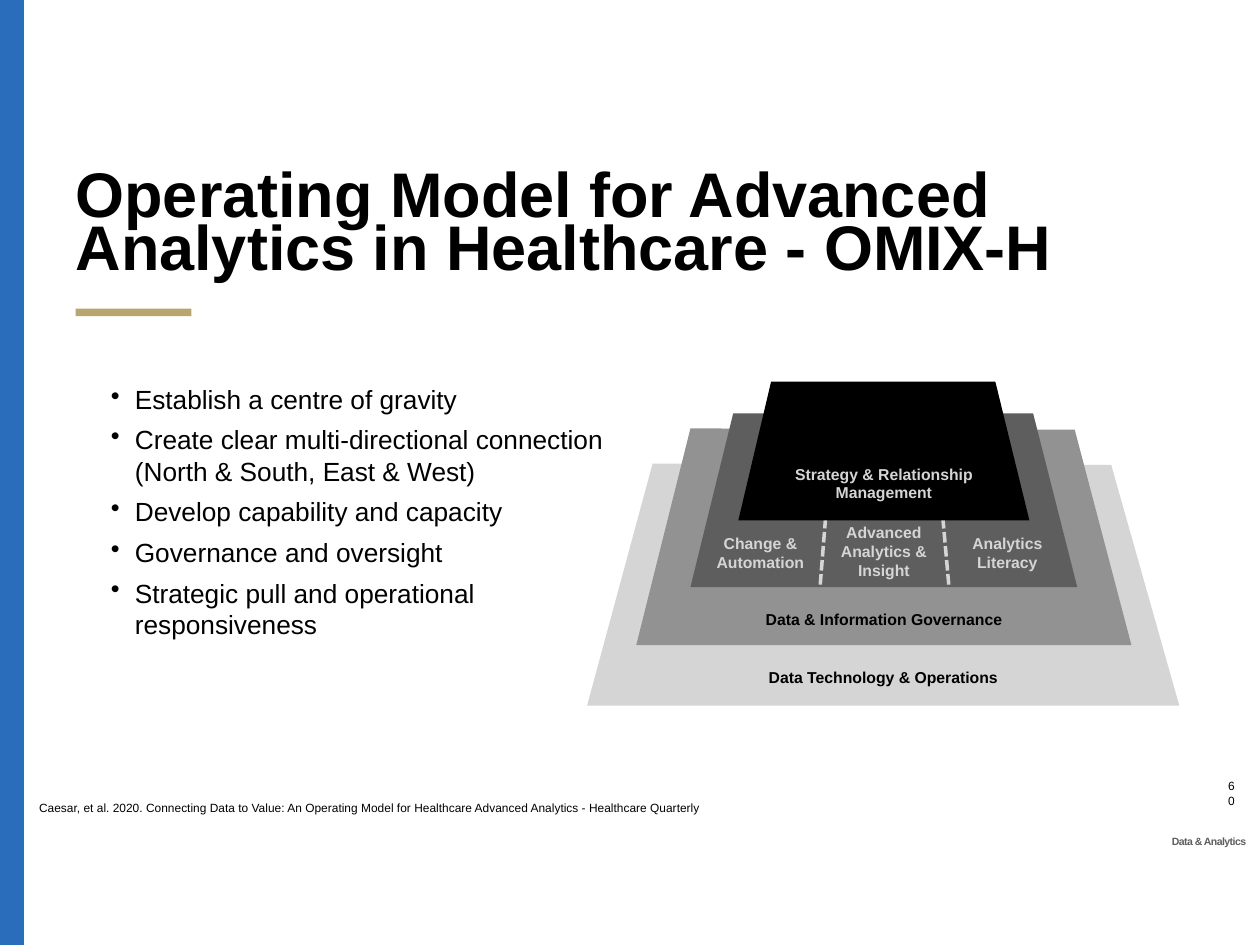
from dataclasses import dataclass

from lxml import etree
from pptx import Presentation
from pptx.dml.color import RGBColor
from pptx.enum.dml import MSO_LINE
from pptx.enum.shapes import MSO_CONNECTOR, MSO_SHAPE
from pptx.enum.text import MSO_ANCHOR, MSO_AUTO_SIZE, PP_ALIGN
from pptx.oxml.ns import qn
from pptx.util import Inches, Pt

LEFT, MID, RIGHT = PP_ALIGN.LEFT, PP_ALIGN.CENTER, PP_ALIGN.RIGHT
TOP, CENTRE = MSO_ANCHOR.TOP, MSO_ANCHOR.MIDDLE
RECT, STRAIGHT = MSO_SHAPE.RECTANGLE, MSO_CONNECTOR.STRAIGHT
DASH, FIXED = MSO_LINE.SQUARE_DOT, MSO_AUTO_SIZE.NONE


@dataclass(frozen=True)
class Theme:
    font: str = "Arial"
    ink: str = "000000"
    blue: str = "2A6EBB"
    gold: str = "B7A66D"
    pale: str = "D5D5D5"
    grey: str = "929292"
    dark: str = "5E5E5E"
    title: float = 36
    body: float = 15
    label: float = 9
    note: float = 6.8
    tag: float = 6


class Page:
    def __init__(self, slide, theme):
        self.slide, self.theme = slide, theme
        self.shapes = slide.shapes

    def paint(self, shape, color):
        shape.shadow.inherit = False
        shape.fill.solid()
        shape.fill.fore_color.rgb = RGBColor.from_string(color)
        shape.line.fill.background()

    def bar(self, box, color):
        self.paint(self.shapes.add_shape(RECT, *map(Inches, box)), color)

    def tier(self, points, color):
        first, *rest = [(Inches(x), Inches(y)) for x, y in points]
        path = self.shapes.build_freeform(*first, scale=1.0)
        path.add_line_segments(rest, close=True)
        self.paint(path.convert_to_shape(), color)

    def dash(self, start, end, color):
        line = self.shapes.add_connector(STRAIGHT, *map(Inches, start + end))
        line.line.color.rgb = RGBColor.from_string(color)
        line.line.width = Pt(2)
        line.line.dash_style = DASH
        etree.SubElement(line._element.spPr, qn("a:effectLst"))

    def setup(self, frame, pad, anchor, wrap=True):
        frame.word_wrap = wrap
        frame.auto_size = FIXED
        frame.vertical_anchor = anchor
        frame.margin_left = frame.margin_right = Inches(pad)
        frame.margin_top = frame.margin_bottom = Inches(pad)

    def style(self, para, size, color, bold=False, align=LEFT):
        para.alignment = align
        for run in para.runs:
            font = run.font
            font.name, font.size, font.bold = self.theme.font, Pt(size), bold
            font.color.rgb = RGBColor.from_string(color)

    def text(self, box, words, size, color, bold=False, align=LEFT,
             anchor=TOP, pad=0.02, wrap=True):
        frame = self.shapes.add_textbox(*map(Inches, box)).text_frame
        self.setup(frame, pad, anchor, wrap)
        frame.text = words
        for para in frame.paragraphs:
            self.style(para, size, color, bold, align)
        return frame

    def label(self, box, words, color):
        self.text(box, words, self.theme.label, color, True, MID, CENTRE)

    def title(self, box, words):
        head = self.shapes.title
        head.left, head.top, head.width, head.height = map(Inches, box)
        frame = head.text_frame
        self.setup(frame, 0.04, TOP)
        frame.text = words
        para = frame.paragraphs[0]
        para.line_spacing = 0.7
        self.style(para, self.theme.title, self.theme.ink, True)

    def bullets(self, box, items):
        frame = self.text(box, "\n".join(items), self.theme.body,
                          self.theme.ink, pad=0.03)
        for i, para in enumerate(frame.paragraphs):
            props = para._p.get_or_add_pPr()
            props.set("marL", str(Inches(0.19)))
            props.set("indent", str(-Inches(0.19)))
            etree.SubElement(props, qn("a:buChar")).set("char", "•")
            if i:
                para.space_before = Pt(5.2)


def main():
    deck = Presentation()
    deck.slide_width, deck.slide_height = Inches(10), Inches(7.5)
    theme = Theme()
    page = Page(deck.slides.add_slide(deck.slide_layouts[5]), theme)

    # Side band, title and accent
    page.bar((0, 0, 0.19, 7.5), theme.blue)
    page.title((0.56, 1.35, 9.25, 1.47),
               "Operating Model for Advanced Analytics in Healthcare - OMIX-H")
    page.bar((0.6, 2.45, 0.92, 0.06), theme.gold)

    # Lower tiers, back to front
    page.tier([(5.18, 3.68), (8.82, 3.69), (9.36, 5.6), (4.66, 5.6)], theme.pale)
    page.label((5.86, 5.28, 2.3, 0.19), "Data Technology & Operations", theme.ink)
    page.tier([(5.48, 3.4), (8.53, 3.41), (8.98, 5.12), (5.05, 5.12)], theme.grey)
    page.label((5.88, 4.82, 2.27, 0.19), "Data & Information Governance", theme.ink)

    # Middle tier with three parts
    page.tier([(5.82, 3.28), (8.2, 3.28), (8.55, 4.66), (5.48, 4.66)], theme.dark)
    page.label((5.62, 4.21, 0.83, 0.35), "Change & Automation", theme.pale)
    page.label((6.58, 4.12, 0.87, 0.51), "Advanced Analytics & Insight", theme.pale)
    page.label((7.56, 4.21, 0.87, 0.35), "Analytics Literacy", theme.pale)
    page.dash((6.51, 4.64), (6.62, 3.26), theme.pale)
    page.dash((7.53, 4.64), (7.41, 3.29), theme.pale)

    # Top tier
    page.tier([(6.12, 3.03), (7.9, 3.03), (8.17, 4.13), (5.86, 4.13)], theme.ink)
    page.label((6.23, 3.66, 1.57, 0.35), "Strategy & Relationship Management",
               theme.pale)

    # Key points
    page.bullets((0.85, 3.01, 4.12, 1.85), [
        "Establish a centre of gravity",
        "Create clear multi-directional connection (North & South, East & West)",
        "Develop capability and capacity",
        "Governance and oversight",
        "Strategic pull and operational responsiveness",
    ])

    # Citation, page number and footer tag
    page.text((0.29, 6.33, 5.58, 0.15),
              "Caesar, et al. 2020. Connecting Data to Value: An Operating Model "
              "for Healthcare Advanced Analytics - Healthcare Quarterly",
              theme.note, theme.ink)
    page.text((9.66, 6.21, 0.19, 0.17), "60", theme.note, theme.ink,
              align=RIGHT, anchor=CENTRE, pad=0.05)
    tag = page.text((9.27, 6.61, 0.65, 0.14), "Data & Analytics", theme.tag,
                    theme.dark, True, MID, CENTRE, wrap=False)
    tag.paragraphs[0].runs[0].font._element.set("spc", "-30")

    deck.save("out.pptx")


if __name__ == "__main__":
    main()
